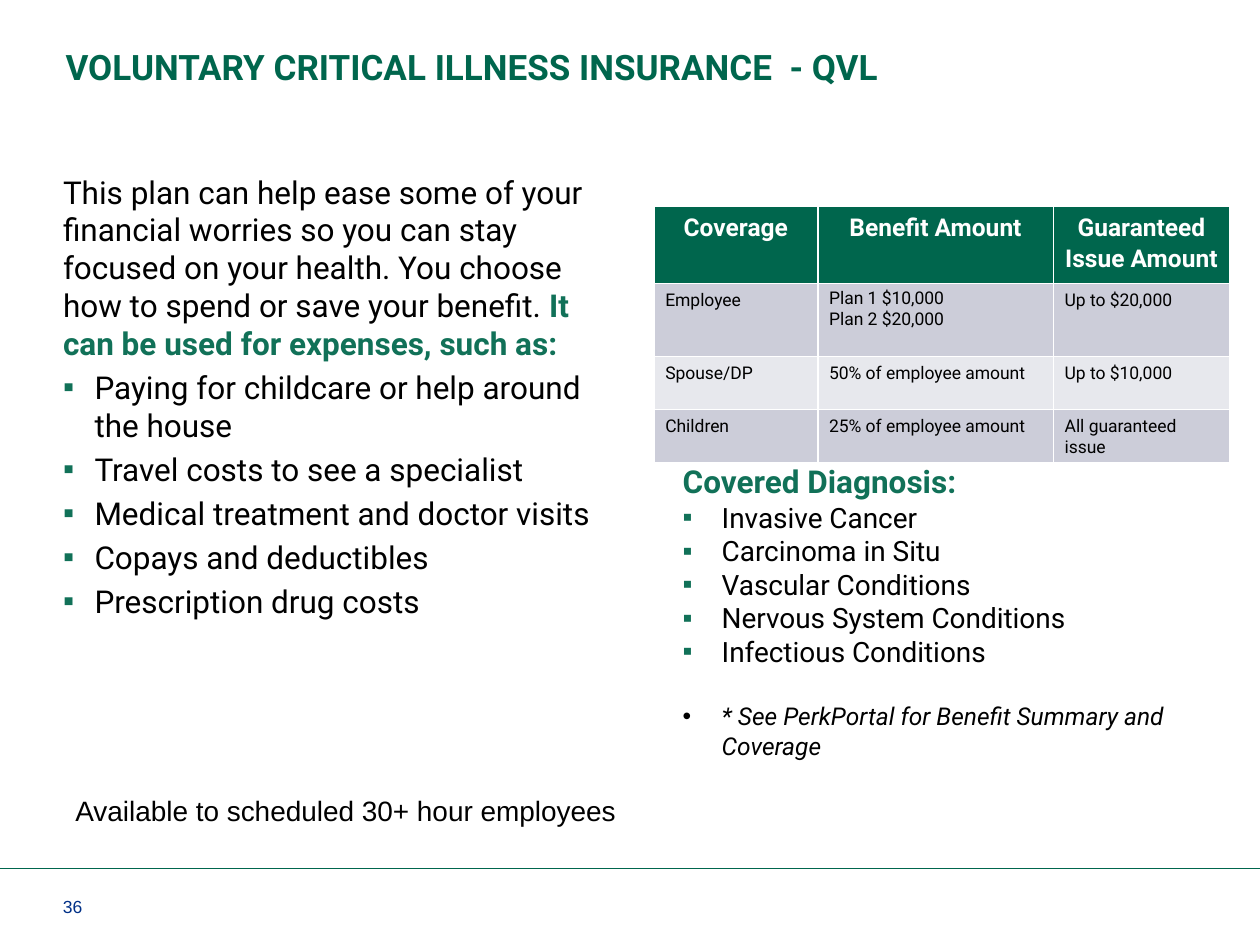
import pptx
import pptx.chart.data
import pptx.dml.color
import pptx.enum.shapes
import pptx.enum.text
import pptx.oxml
import pptx.oxml.ns
import pptx.util
import lxml.etree

GREEN, ACCENT, BLACK, WHITE, BLUE = "00664D", "117158", "000000", "FFFFFF", "003087"
WIDTH, HEIGHT = 10, 7.5
LEFT = 0.05 * WIDTH

TITLE = "VOLUNTARY CRITICAL ILLNESS INSURANCE  - QVL"
INTRO = [
    ("This plan can help ease some of your financial worries so you can stay focused on "
     "your health. You choose how to spend or save your benefit. ", BLACK, False),
    ("It can be used for expenses, such as:", ACCENT, True),
]
EXPENSES = [
    "Paying for childcare or help around the house",
    "Travel costs to see a specialist",
    "Medical treatment and doctor visits",
    "Copays and deductibles",
    "Prescription drug costs",
]
COVERAGE = [
    ["Coverage", "Benefit Amount", "Guaranteed Issue Amount"],
    ["Employee", "Plan 1 $10,000\nPlan 2 $20,000", "Up to $20,000"],
    ["Spouse/DP", "50% of employee amount", "Up to $10,000"],
    ["Children", "25% of employee amount", "All guaranteed issue"],
]
COLUMN_WIDTHS = [1.3, 1.87, 1.4]
ROW_HEIGHTS = [0.61, 0.58, 0.42, 0.4]
ROW_FILLS = [GREEN, "CCCDD9", "E7E8ED", "CCCDD9"]
DIAGNOSIS_HEADING = "Covered Diagnosis:"
DIAGNOSES = [
    "Invasive Cancer",
    "Carcinoma in Situ",
    "Vascular Conditions",
    "Nervous System Conditions",
    "Infectious Conditions",
]
FOOTNOTE = "* See PerkPortal for Benefit Summary and Coverage"
AVAILABILITY = "Available to scheduled 30+ hour employees"
PAGE_NUMBER = "36"


def rgb(value):
    return pptx.dml.color.RGBColor.from_string(value)


def place(shape, left, top, width, height):
    shape.left, shape.top, shape.width, shape.height = map(
        pptx.util.Inches, (left, top, width, height))


def set_insets(target, left, top, right, bottom):
    target.margin_left, target.margin_top, target.margin_right, target.margin_bottom = map(
        pptx.util.Inches, (left, top, right, bottom))


def style(paragraph, size, color=BLACK, name="Roboto", bold=False, italic=False):
    font = paragraph.font
    font.size, font.name, font.bold, font.italic = pptx.util.Pt(size), name, bold, italic
    font.color.rgb = rgb(color)


def set_bullet(paragraph, character, indent, color):
    properties = paragraph._p.get_or_add_pPr()
    properties.set("marL", str(pptx.util.Inches(indent)))
    properties.set("indent", str(-pptx.util.Inches(indent)))
    qn = pptx.oxml.ns.qn
    bullet_color = lxml.etree.SubElement(properties, qn("a:buClr"))
    lxml.etree.SubElement(bullet_color, qn("a:srgbClr"), val=color)
    lxml.etree.SubElement(properties, qn("a:buFont"), typeface="Arial")
    lxml.etree.SubElement(properties, qn("a:buChar"), char=character)


def remove_bullet(paragraph):
    properties = paragraph._p.get_or_add_pPr()
    properties.set("marL", "0")
    properties.set("indent", "0")
    lxml.etree.SubElement(properties, pptx.oxml.ns.qn("a:buNone"))


def add_bullet_item(frame, text, size, indent, character="▪", color=ACCENT, italic=False):
    paragraph = frame.add_paragraph()
    paragraph.text = text
    set_bullet(paragraph, character, indent, color)
    style(paragraph, size, italic=italic)
    return paragraph


def add_text(slide, box, text, size, **font):
    shape = slide.shapes.add_textbox(*map(pptx.util.Inches, box))
    frame = shape.text_frame
    frame.word_wrap = True
    frame.text = text
    style(frame.paragraphs[0], size, **font)
    return frame


def fill_title(slide):
    title = slide.shapes.title
    place(title, 0.52, 0.31, 0.9 * WIDTH, 0.39)
    frame = title.text_frame
    frame.text = TITLE
    frame.auto_size = pptx.enum.text.MSO_AUTO_SIZE.NONE
    frame.vertical_anchor = pptx.enum.text.MSO_ANCHOR.TOP
    set_insets(frame, 0, 0.05, 0, 0.05)
    frame.paragraphs[0].alignment = pptx.enum.text.PP_ALIGN.LEFT
    style(frame.paragraphs[0], 20, GREEN, bold=True)


def fill_body(slide):
    body = slide.placeholders[1]
    place(body, LEFT, 1.32, 4.42, 4.32)
    frame = body.text_frame
    frame.auto_size = pptx.enum.text.MSO_AUTO_SIZE.NONE
    set_insets(frame, 0, 0.05, 0.1, 0.05)
    intro = frame.paragraphs[0]
    remove_bullet(intro)
    intro.space_before = pptx.util.Pt(0)
    style(intro, 18)
    for text, color, bold in INTRO:
        run = intro.add_run()
        run.text = text
        run.font.bold = bold
        run.font.color.rgb = rgb(color)
    for expense in EXPENSES:
        add_bullet_item(frame, expense, 18, 0.25)


def add_coverage_table(slide):
    box = (5.19, 1.64, sum(COLUMN_WIDTHS), sum(ROW_HEIGHTS))
    table = slide.shapes.add_table(
        len(COVERAGE), len(COLUMN_WIDTHS), *map(pptx.util.Inches, box)).table
    for column, width in zip(table.columns, COLUMN_WIDTHS):
        column.width = pptx.util.Inches(width)
    for index, (row, height) in enumerate(zip(table.rows, ROW_HEIGHTS)):
        row.height = pptx.util.Inches(height)
        header = index == 0
        for cell, text in zip(row.cells, COVERAGE[index]):
            cell.text = text
            cell.fill.solid()
            cell.fill.fore_color.rgb = rgb(ROW_FILLS[index])
            set_insets(cell, 0.09, 0.04, 0.09, 0.04)
            paragraphs = cell.text_frame.paragraphs
            for paragraph in paragraphs:
                if len(paragraphs) == 1:
                    paragraph.line_spacing = 1.07
                if header:
                    paragraph.alignment = pptx.enum.text.PP_ALIGN.CENTER
                style(paragraph, 14 if header else 10, WHITE if header else BLACK, bold=header)


def add_diagnoses(slide):
    frame = add_text(slide, (5.32, 3.62, 4.2, 2.86), DIAGNOSIS_HEADING, 18,
                     color=ACCENT, bold=True)
    for diagnosis in DIAGNOSES:
        add_bullet_item(frame, diagnosis, 16, 0.31)
    footnote = add_bullet_item(frame, FOOTNOTE, 14, 0.31, "•", BLACK, italic=True)
    footnote.space_before = pptx.util.Pt(19)


def add_footer(slide):
    add_text(slide, (LEFT, 6.25, 5.16, 0.37), AVAILABILITY, 16, name="Arial")
    ends = map(pptx.util.Inches, (0, 6.89, WIDTH, 6.89))
    rule = slide.shapes.add_connector(pptx.enum.shapes.MSO_CONNECTOR.STRAIGHT, *ends)
    rule.line.color.rgb = rgb(GREEN)
    rule.line.width = pptx.util.Pt(0.5)
    lxml.etree.SubElement(rule._element.spPr, pptx.oxml.ns.qn("a:effectLst"))
    number = add_text(slide, (LEFT, 7.08, 0.54, 0.25), PAGE_NUMBER, 10,
                      color=BLUE, name="Arial")
    number.vertical_anchor = pptx.enum.text.MSO_ANCHOR.BOTTOM
    set_insets(number, 0, 0.05, 0, 0.05)


def main():
    presentation = pptx.Presentation()
    presentation.slide_width = pptx.util.Inches(WIDTH)
    presentation.slide_height = pptx.util.Inches(HEIGHT)
    slide = presentation.slides.add_slide(presentation.slide_layouts[1])
    fill_title(slide)
    fill_body(slide)
    add_coverage_table(slide)
    add_diagnoses(slide)
    add_footer(slide)
    presentation.save("out.pptx")


if __name__ == "__main__":
    main()
